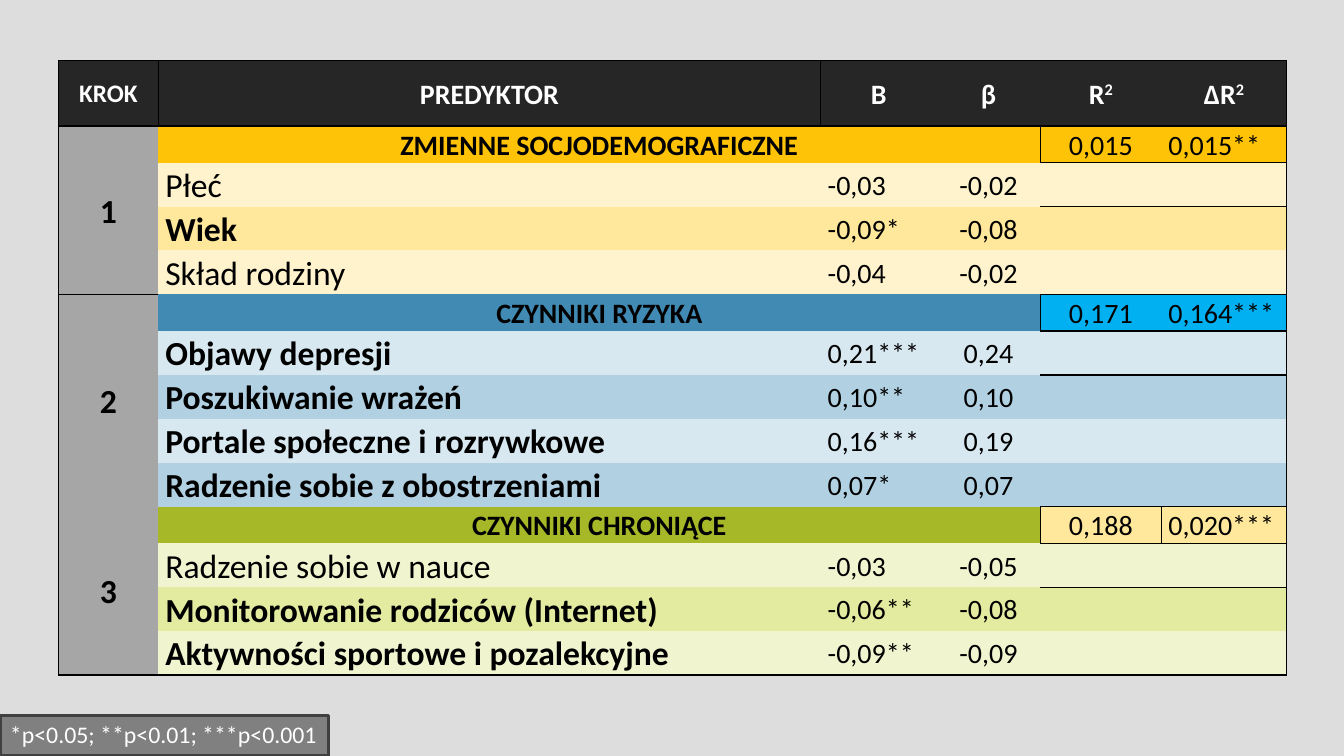
from lxml import etree
from pptx import Presentation
from pptx import util as u
from pptx.dml.color import RGBColor
from pptx.enum import shapes, text
from pptx.oxml import ns

COLORS = {
    "background": "DDDDDD", "header": "262626", "step": "A6A6A6",
    "black": "000000", "white": "FFFFFF", "note": "808080", "note_line": "404040",
}
# Each step: title, R², ΔR², colours, then predictor rows (name, bold, B, β)
STEPS = [
    {"title": "ZMIENNE SOCJODEMOGRAFICZNE", "r2": "0,015", "change": "0,015**",
     "heading": "FEC306", "result": "FEC306", "bands": ["FFF3CD", "FFE79B"],
     "predictors": [("Płeć", False, "-0,03", "-0,02"),
                    ("Wiek", True, "-0,09*", "-0,08"),
                    ("Skład rodziny", False, "-0,04", "-0,02")]},
    {"title": "CZYNNIKI RYZYKA", "r2": "0,171", "change": "0,164***",
     "heading": "418AB3", "result": "00B0F0", "bands": ["D8E8F1", "B1D1E3"],
     "predictors": [("Objawy depresji", True, "0,21***", "0,24"),
                    ("Poszukiwanie wrażeń", True, "0,10**", "0,10"),
                    ("Portale społeczne i rozrywkowe", True, "0,16***", "0,19"),
                    ("Radzenie sobie z obostrzeniami", True, "0,07*", "0,07")]},
    {"title": "CZYNNIKI CHRONIĄCE", "r2": "0,188", "change": "0,020***",
     "heading": "A6B727", "result": "FFE79B", "bands": ["F0F5D0", "E2EBA0"],
     "predictors": [("Radzenie sobie w nauce", False, "-0,03", "-0,05"),
                    ("Monitorowanie rodziców (Internet)", True, "-0,06**", "-0,08"),
                    ("Aktywności sportowe i pozalekcyjne", True, "-0,09**", "-0,09")]},
]
COLUMN_WIDTHS = [0.99, 6.57, 1.15, 1.03, 1.2, 1.24]
HEADER_HEIGHT, HEADING_HEIGHT, PREDICTOR_HEIGHT = 0.65, 0.36, 0.43
CENTER, LEFT = text.PP_ALIGN.CENTER, text.PP_ALIGN.LEFT
NO_STYLE = "{2D5ABB26-0587-4C30-8999-92F81FD0307C}"


def write_cell(cell, words, fill, size=20, bold=False, color="black", align=CENTER, power=""):
    cell_format = {"margin_left": u.Inches(0.07), "margin_right": u.Inches(0.07),
                   "margin_top": 0, "margin_bottom": 0,
                   "vertical_anchor": text.MSO_ANCHOR.MIDDLE}
    for name, value in cell_format.items():
        setattr(cell, name, value)
    cell.fill.solid()
    cell.fill.fore_color.rgb = RGBColor.from_string(fill)
    paragraph = cell.text_frame.paragraphs[0]
    paragraph.alignment = align
    paragraph.line_spacing = 1.07
    paragraph.space_after = u.Pt(8)
    for part in filter(None, (words, power)):
        run = paragraph.add_run()
        run.text = part
        for name, value in {"name": "Calibri", "size": u.Pt(size), "bold": bold}.items():
            setattr(run.font, name, value)
        run.font.color.rgb = RGBColor.from_string(COLORS[color])
        if part == power:
            run.font._element.set("baseline", "30000")


def add_borders(cell, widths):
    properties = cell._tc.get_or_add_tcPr()
    for position, (side, width) in enumerate(widths.items()):
        line = etree.Element(ns.qn(f"a:ln{side}"), w=str(u.Pt(width)))
        if width:
            fill = etree.SubElement(line, ns.qn("a:solidFill"))
            etree.SubElement(fill, ns.qn("a:srgbClr"), val=COLORS["black"])
        else:
            etree.SubElement(line, ns.qn("a:noFill"))
        properties.insert(position, line)


presentation = Presentation()
presentation.slide_width = u.Inches(13.33)
presentation.slide_height = u.Inches(7.5)
slide = presentation.slides.add_slide(presentation.slide_layouts[6])
slide.background.fill.solid()
slide.background.fill.fore_color.rgb = RGBColor.from_string(COLORS["background"])

# Table grid
row_heights = [HEADER_HEIGHT]
for step in STEPS:
    row_heights += [HEADING_HEIGHT] + [PREDICTOR_HEIGHT] * len(step["predictors"])
row_count, column_count = len(row_heights), len(COLUMN_WIDTHS)
frame = slide.shapes.add_table(
    row_count, column_count, u.Inches(0.58), u.Inches(0.6),
    u.Inches(sum(COLUMN_WIDTHS)), u.Inches(sum(row_heights)))
table = frame.table
table.first_row = table.horz_banding = False
next(frame._element.iter(ns.qn("a:tableStyleId"))).text = NO_STYLE
for column, width in zip(table.columns, COLUMN_WIDTHS):
    column.width = u.Inches(width)
for row, height in zip(table.rows, row_heights):
    row.height = u.Inches(height)

# Header row
headers = [("KROK", 18, ""), ("PREDYKTOR", 20, ""), ("B", 20, ""),
           ("β", 20, ""), ("R", 20, "2"), ("ΔR", 20, "2")]
for column, (words, size, power) in enumerate(headers):
    write_cell(table.cell(0, column), words, COLORS["header"], size, True, "white", power=power)

# Steps with their predictors
first_row = 1
heading_rows = []
for number, step in enumerate(STEPS, 1):
    heading_rows.append(first_row)
    last_row = first_row + len(step["predictors"])
    table.cell(first_row, 0).merge(table.cell(last_row, 0))
    table.cell(first_row, 1).merge(table.cell(first_row, 3))
    write_cell(table.cell(first_row, 0), str(number), COLORS["step"], 24, True)
    write_cell(table.cell(first_row, 1), step["title"], step["heading"], bold=True)
    write_cell(table.cell(first_row, 4), step["r2"], step["result"])
    write_cell(table.cell(first_row, 5), step["change"], step["result"], align=LEFT)
    for index, (name, bold, b_value, beta) in enumerate(step["predictors"]):
        row, band = first_row + 1 + index, step["bands"][index % 2]
        write_cell(table.cell(row, 1), name, band, 24, bold, align=LEFT)
        write_cell(table.cell(row, 2), b_value, band, align=LEFT)
        write_cell(table.cell(row, 3), beta, band)
        for column in (4, 5):
            write_cell(table.cell(row, column), "", band)
    first_row = last_row + 1

# Line widths by grid edge: (row, edge) for upright lines, (edge, column) for level ones
upright = {(row, edge): 1 for row in range(row_count) for edge in (0, column_count)}
upright.update({(0, 1): 1, (0, 2): 1, (heading_rows[-1], 5): 1})
upright.update({(row, 4): 1 for row in heading_rows})
level = {(edge, column): 1 for edge in (0, 1, row_count) for column in range(column_count)}
level.update({(1, column): 2 for column in (1, 2, 3)})
level.update({(row + offset, column): 1 for row in heading_rows
              for offset in range(3) for column in (4, 5)})
level[heading_rows[1], 0] = 1

# Neighbouring cells share each edge; a merged cell ends at its far edge
for row in range(row_count):
    for column in range(column_count):
        cell = table.cell(row, column)
        height, width = (cell.span_height, cell.span_width) if cell.is_merge_origin else (1, 1)
        add_borders(cell, {
            "L": upright.get((row, column), 0),
            "R": upright.get((row, column + width), 0),
            "T": level.get((row, column), 0),
            "B": level.get((row + height, column), 0)})

# Significance note on one line
bar = slide.shapes.add_shape(shapes.MSO_SHAPE.RECTANGLE, 0, u.Inches(7.1),
                             u.Inches(3.26), u.Inches(0.4))
bar.shadow.inherit = False
bar.fill.solid()
bar.fill.fore_color.rgb = RGBColor.from_string(COLORS["note"])
bar.line.color.rgb = RGBColor.from_string(COLORS["note_line"])
bar.line.width = u.Pt(2.5)
note = slide.shapes.add_textbox(0, u.Inches(7.09), u.Inches(3.39), u.Inches(0.4))
note.text_frame.word_wrap = False
note_paragraph = note.text_frame.paragraphs[0]
note_paragraph.alignment = LEFT
note_run = note_paragraph.add_run()
note_run.text = "*p<0.05; **p<0.01; ***p<0.001"
note_run.font.name = "Calibri"
note_run.font.size = u.Pt(17)
note_run.font.color.rgb = RGBColor.from_string(COLORS["white"])

presentation.save("out.pptx")
